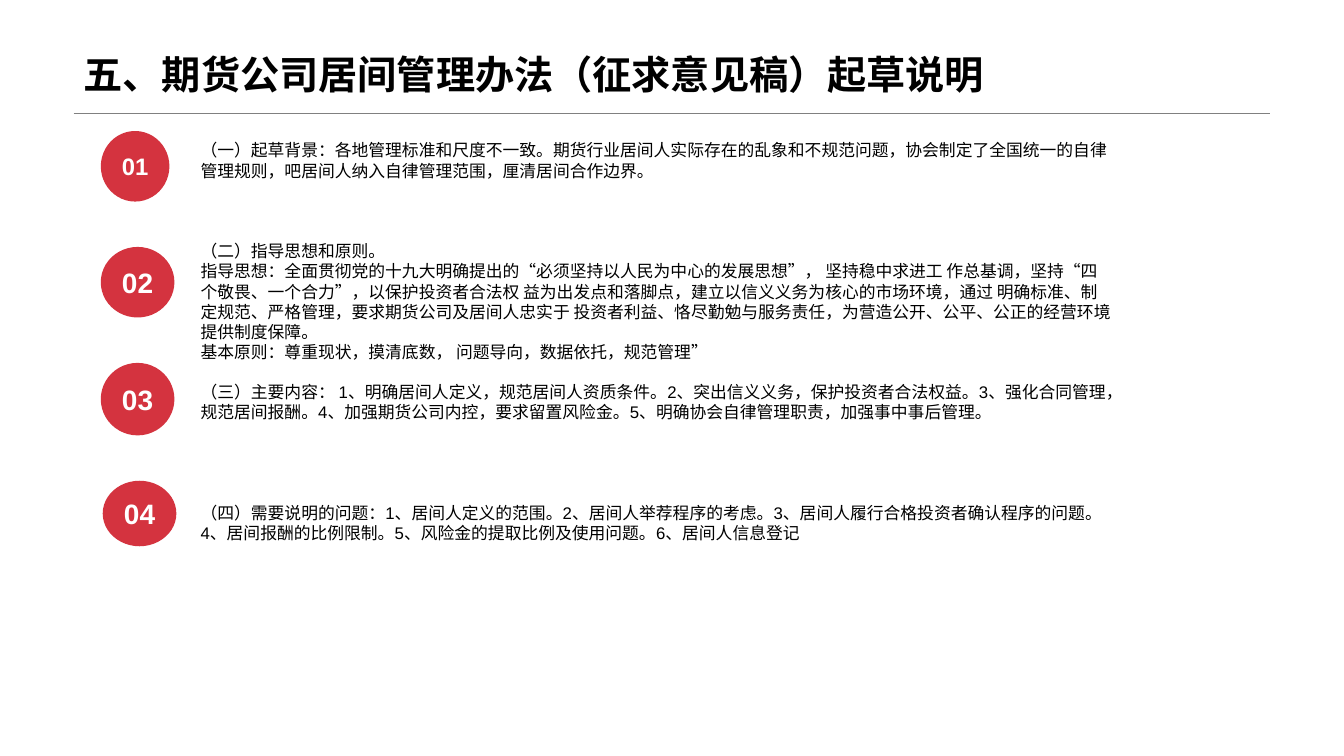
from dataclasses import dataclass

from lxml import etree
from pptx import Presentation
from pptx.dml.color import RGBColor
from pptx.enum.shapes import MSO_CONNECTOR, MSO_SHAPE
from pptx.enum.text import MSO_ANCHOR, MSO_AUTO_SIZE, PP_ALIGN
from pptx.oxml.ns import qn
from pptx.util import Pt

LEFT, CENTER = PP_ALIGN.LEFT, PP_ALIGN.CENTER
TOP, MIDDLE = MSO_ANCHOR.TOP, MSO_ANCHOR.MIDDLE
NO_AUTOFIT = MSO_AUTO_SIZE.NONE
OVAL = MSO_SHAPE.OVAL
STRAIGHT = MSO_CONNECTOR.STRAIGHT


@dataclass(frozen=True)
class Theme:
    font: str = "Arial"
    ink: RGBColor = RGBColor(0x00, 0x00, 0x00)
    badge: RGBColor = RGBColor(0xD4, 0x33, 0x3F)
    badge_text: RGBColor = RGBColor(0xFF, 0xFF, 0xFF)
    rule: RGBColor = RGBColor(0x80, 0x80, 0x80)
    title_size: float = 28
    body_size: float = 12
    body_line: float = 14.4


@dataclass(frozen=True)
class Badge:
    label: str
    left: float
    top: float
    width: float
    height: float
    size: float = 20


@dataclass(frozen=True)
class Passage:
    text: str
    lines_before: int = 0


THEME = Theme()
TITLE = "五、期货公司居间管理办法（征求意见稿）起草说明"

BADGES = [
    Badge("01", 72, 93.6, 49, 50.4, 17),
    Badge("02", 72, 176.4, 52.6, 50.4),
    Badge("03", 72, 259.2, 52.6, 51.8),
    Badge("04", 73.4, 343.4, 52.6, 46.8),
]

PASSAGES = [
    Passage("（一）起草背景：各地管理标准和尺度不一致。期货行业居间人实际存在的乱象和不规范问题，"
            "协会制定了全国统一的自律管理规则，吧居间人纳入自律管理范围，厘清居间合作边界。"),
    Passage("（二）指导思想和原则。", 3),
    Passage("指导思想：全面贯彻党的十九大明确提出的“必须坚持以人民为中心的发展思想”， "
            "坚持稳中求进工 作总基调，坚持“四个敬畏、一个合力”，以保护投资者合法权 "
            "益为出发点和落脚点，建立以信义义务为核心的市场环境，通过 明确标准、制定规范、"
            "严格管理，要求期货公司及居间人忠实于 投资者利益、恪尽勤勉与服务责任，"
            "为营造公开、公平、公正的经营环境提供制度保障。"),
    Passage("基本原则：尊重现状，摸清底数， 问题导向，数据依托，规范管理”"),
    Passage("（三）主要内容： 1、明确居间人定义，规范居间人资质条件。2、突出信义义务，"
            "保护投资者合法权益。3、强化合同管理，规范居间报酬。4、加强期货公司内控，"
            "要求留置风险金。5、明确协会自律管理职责，加强事中事后管理。", 1),
    Passage("（四）需要说明的问题：1、居间人定义的范围。2、居间人举荐程序的考虑。"
            "3、居间人履行合格投资者确认程序的问题。", 4),
    Passage("4、居间报酬的比例限制。5、风险金的提取比例及使用问题。6、居间人信息登记"),
]


def place(shape, left: float, top: float, width: float, height: float) -> None:
    shape.left, shape.top = Pt(left), Pt(top)
    shape.width, shape.height = Pt(width), Pt(height)


def add_run(paragraph, text: str, size: float, color: RGBColor, bold: bool = False) -> None:
    run = paragraph.add_run()
    run.text = text
    run.font.name = THEME.font
    run.font.size = Pt(size)
    run.font.bold = bold
    run.font.color.rgb = color


def fill_title(shape) -> None:
    place(shape, 52.6, 28.8, 854.6, 52.6)
    frame = shape.text_frame
    frame.auto_size = NO_AUTOFIT
    frame.vertical_anchor = MIDDLE
    paragraph = frame.paragraphs[0]
    paragraph.alignment = LEFT
    paragraph.line_spacing = 0.9
    add_run(paragraph, TITLE, THEME.title_size, THEME.ink, bold=True)


def fill_body(shape, passages: list[Passage]) -> None:
    place(shape, 136.1, 96.5, 665.3, 356.4)
    frame = shape.text_frame
    frame.word_wrap = True
    frame.auto_size = NO_AUTOFIT
    frame.vertical_anchor = TOP
    for index, passage in enumerate(passages):
        paragraph = frame.add_paragraph() if index else frame.paragraphs[0]
        properties = paragraph._p.get_or_add_pPr()
        properties.set("marL", "0")
        properties.set("indent", "0")
        etree.SubElement(properties, qn("a:buNone"))
        paragraph.alignment = LEFT
        paragraph.space_before = Pt(passage.lines_before * THEME.body_line)
        add_run(paragraph, passage.text, THEME.body_size, THEME.ink)


def add_rule(slide) -> None:
    rule = slide.shapes.add_connector(STRAIGHT, Pt(52.6), Pt(80.9), Pt(907.2), Pt(80.9))
    rule.line.color.rgb = THEME.rule
    rule.line.width = Pt(0.25)
    etree.SubElement(rule._element.spPr, qn("a:effectLst"))


def add_badge(slide, badge: Badge) -> None:
    shape = slide.shapes.add_shape(
        OVAL, Pt(badge.left), Pt(badge.top), Pt(badge.width), Pt(badge.height))
    shape.shadow.inherit = False
    shape.fill.solid()
    shape.fill.fore_color.rgb = THEME.badge
    shape.line.fill.background()
    frame = shape.text_frame
    frame.word_wrap = False
    frame.vertical_anchor = MIDDLE
    paragraph = frame.paragraphs[0]
    paragraph.alignment = CENTER
    add_run(paragraph, badge.label, badge.size, THEME.badge_text, bold=True)


def main() -> None:
    presentation = Presentation()
    presentation.slide_width, presentation.slide_height = Pt(960), Pt(540)
    slide = presentation.slides.add_slide(presentation.slide_layouts[1])

    # Heading and its rule
    add_rule(slide)
    fill_title(slide.shapes.title)

    # Passages and numbered badges
    fill_body(slide.placeholders[1], PASSAGES)
    for badge in BADGES:
        add_badge(slide, badge)

    presentation.save("out.pptx")


if __name__ == "__main__":
    main()
